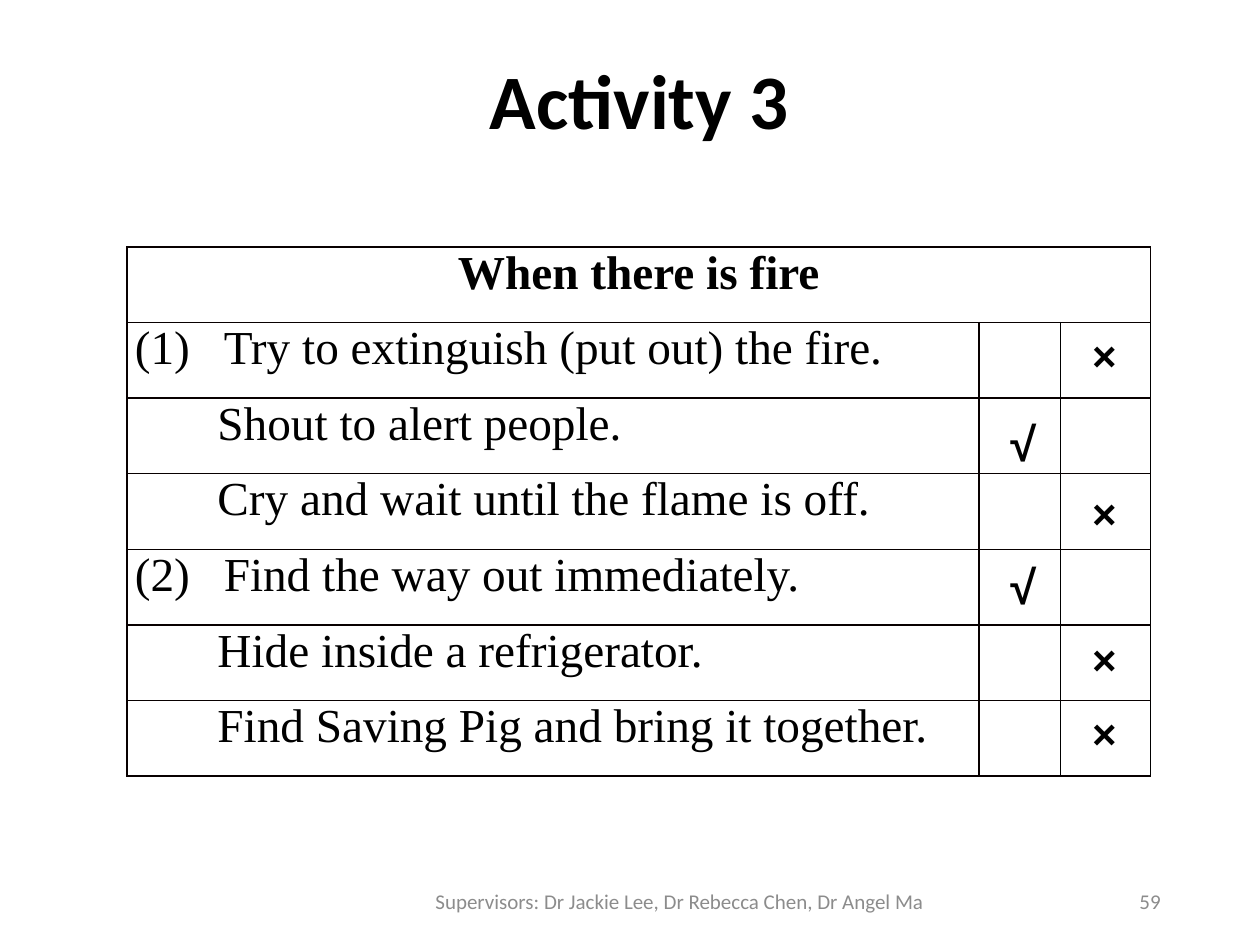
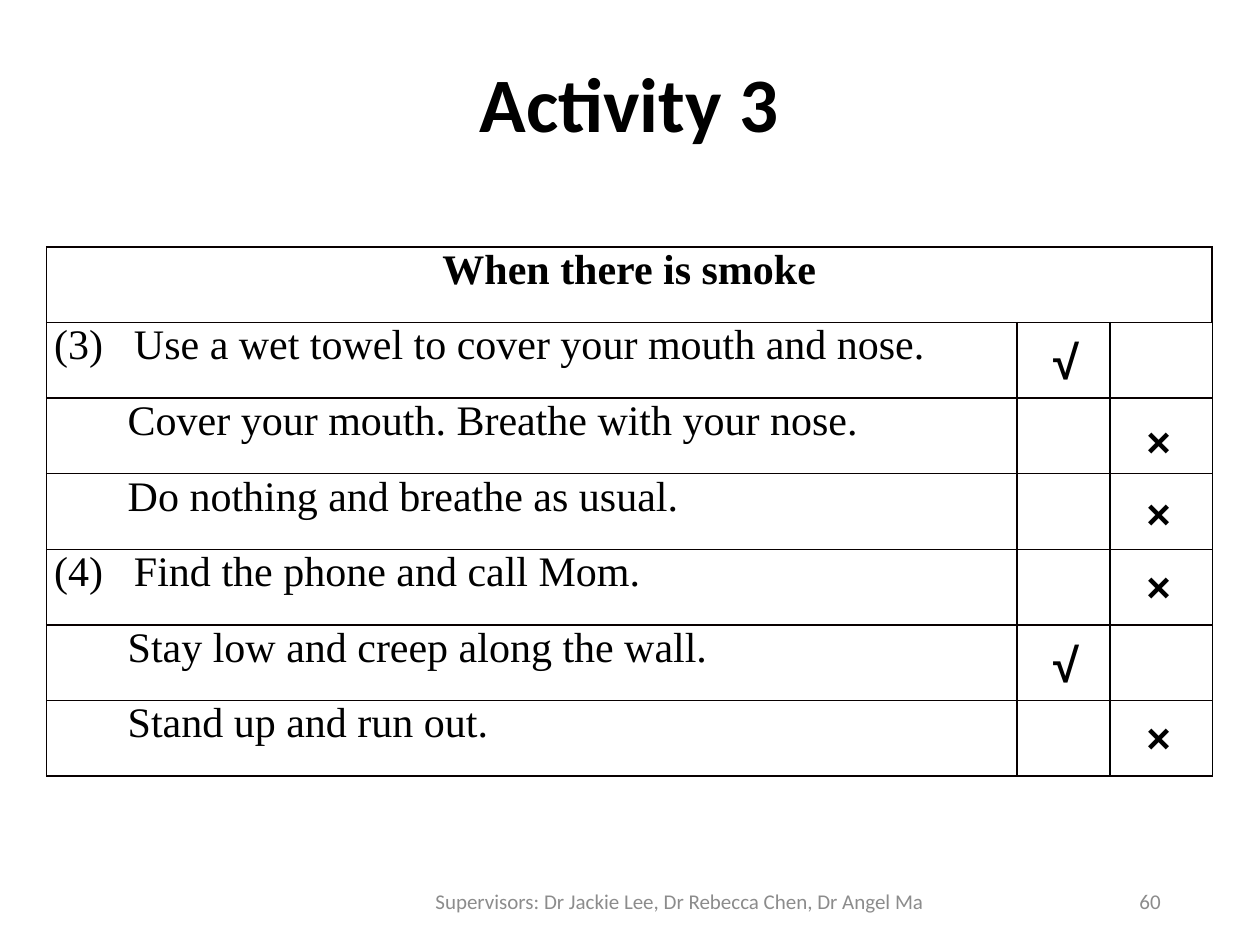
from lxml.etree import SubElement
from pptx import Presentation
from pptx.dml.color import RGBColor as RGB
from pptx.enum.text import MSO_ANCHOR as ANCHOR, PP_ALIGN as ALIGN
from pptx.oxml.ns import qn
from pptx.util import Inches, Pt

COLORS = {"ink": "000000", "rule": "080000", "footer": "8C8C8C"}
WIDTH, HEIGHT = Inches(10), Inches(7.5)
COL, ROW = WIDTH / 100, HEIGHT / 75
ROW_STEP = 6
MARKS = {"√": dict(column=1, size=27, w=5.3, h=5.6),
         "×": dict(column=2, size=24, w=5.4, h=5)}
SUPERVISORS = "Supervisors: Dr Jackie Lee, Dr Rebecca Chen, Dr Angel Ma"

ACTIVITIES = [
    dict(
        title_box=(3.6, 4.1, 94.3, 15.2), page=59,
        box=(10.1, 19.6), widths=(67.6, 6.5, 7.1), size=27, mark_shift=1.5,
        heading="When there is fire",
        items=[
            ("(1)", "Try to extinguish (put out) the fire.", "×", 0.1),
            ("", "Shout to alert people.", "√", 0.8),
            ("", "Cry and wait until the flame is off.", "×", 0.6),
            ("(2)", "Find the way out immediately.", "√", 0.1),
            ("", "Hide inside a refrigerator.", "×", 0.2),
            ("", "Find Saving Pig and bring it together.", "×", 0.1),
        ]),
    dict(
        title_box=(2.8, 4.3, 94.3, 15.2), page=60,
        box=(3.7, 19.6), widths=(77, 7.4, 8.1), size=24, mark_shift=1.9,
        heading="When there is smoke",
        items=[
            ("(3)", "Use a wet towel to cover your mouth and nose.", "√", 0.3),
            ("", "Cover your mouth. Breathe with your nose.", "×", 0.9),
            ("", "Do nothing and breathe as usual.", "×", 0.6),
            ("(4)", "Find the phone and call Mom.", "×", 0.4),
            ("", "Stay low and creep along the wall.", "√", 0.3),
            ("", "Stand up and run out.", "×", 0.4),
        ]),
]


def grid(x, y, w, h):
    """Turn grid columns and rows into slide lengths."""
    return round(x * COL), round(y * ROW), round(w * COL), round(h * ROW)


def write(tf, text, size, font="Calibri", color="ink", bold=False,
          align=ALIGN.LEFT, spacing=None):
    """Write one formatted paragraph and return it."""
    p = tf.paragraphs[0]
    p.alignment, p.line_spacing = align, spacing
    r = p.add_run()
    r.text = text
    r.font.size, r.font.name, r.font.bold = Pt(size), font, bold
    r.font.color.rgb = RGB.from_string(COLORS[color])
    return p


def add_text(slide, box, text, size, anchor=ANCHOR.TOP, top=0.05, **fmt):
    """Add a wrapping text box."""
    tf = slide.shapes.add_textbox(*grid(*box)).text_frame
    tf.word_wrap = True
    tf.vertical_anchor = anchor
    tf.margin_top = Inches(top)
    write(tf, text, size, **fmt)


def add_frame(slide, title_box, page):
    """Add the title, footer and page number."""
    add_text(slide, title_box, "Activity 3", 44, top=0.09, bold=True,
             align=ALIGN.CENTER, spacing=0.9)
    footer = dict(size=12, anchor=ANCHOR.MIDDLE, color="footer")
    add_text(slide, (70.6, 69.5, 22.5, 4), str(page), align=ALIGN.RIGHT, **footer)
    add_text(slide, (33.1, 69.5, 41.7, 4), SUPERVISORS, align=ALIGN.CENTER, **footer)


def style_cell(cell, column):
    """Set the margins, borders and empty fill of a cell."""
    cell.margin_left = cell.margin_right = Inches(0.06)
    cell.margin_top, cell.margin_bottom = 0, Inches(0.08)
    thin = {1: ("lnR",), 2: ("lnL", "lnR")}.get(column, ())
    for side in ("lnL", "lnR", "lnT", "lnB"):
        width, color = (0.75, "ink") if side in thin else (1, "rule")
        ln = SubElement(cell._tc.get_or_add_tcPr(), qn(f"a:{side}"), w=str(Pt(width)))
        fill = SubElement(ln, qn("a:solidFill"))
        SubElement(fill, qn("a:srgbClr"), val=COLORS[color])
    cell.fill.background()


def indent(p, number, size):
    """Align the statement, hanging its number when there is one."""
    left = Pt(1.75 * size) + (Inches(0.05) if number else 0)
    pPr = p._p.get_or_add_pPr()
    pPr.set("marL", str(left))
    pPr.set("indent", str(-left if number else 0))


def add_quiz(slide, box, widths, size, heading, items):
    """Add the ruled table of numbered statements."""
    rows = len(items) + 1
    tbl = slide.shapes.add_table(
        rows, len(widths), *grid(*box, sum(widths), rows * ROW_STEP)).table
    tbl.first_row = tbl.horz_banding = False
    for column, width in zip(tbl.columns, widths):
        column.width = round(width * COL)
    for row in tbl.rows:
        row.height = round(ROW_STEP * ROW)
        for column, cell in enumerate(row.cells):
            style_cell(cell, column)
    tbl.cell(0, 0).merge(tbl.cell(0, len(widths) - 1))
    font = "Times New Roman"
    write(tbl.cell(0, 0).text_frame, heading, size, font, bold=True, align=ALIGN.CENTER)
    for i, (number, statement, *_) in enumerate(items, 1):
        text = f"{number}\t{statement}" if number else statement
        indent(write(tbl.cell(i, 0).text_frame, text, size, font), number, size)


def add_marks(slide, box, widths, shift, items):
    """Lay a tick or cross over the answer column of each row."""
    x, y = box
    for i, (_, _, mark, drop) in enumerate(items, 1):
        m = MARKS[mark]
        left = x + sum(widths[:m["column"]]) + shift
        add_text(slide, (left, y + i * ROW_STEP + drop, m["w"], m["h"]),
                 mark, m["size"], font="Arial", bold=True)


def add_activity(prs, title_box, page, box, widths, size, mark_shift, heading, items):
    """Add one activity slide."""
    slide = prs.slides.add_slide(prs.slide_layouts[6])
    add_frame(slide, title_box, page)
    add_quiz(slide, box, widths, size, heading, items)
    add_marks(slide, box, widths, mark_shift, items)


def main():
    """Build and save the presentation."""
    prs = Presentation()
    prs.slide_width, prs.slide_height = WIDTH, HEIGHT
    for activity in ACTIVITIES:
        add_activity(prs, **activity)
    prs.save("out.pptx")


if __name__ == "__main__":
    main()
